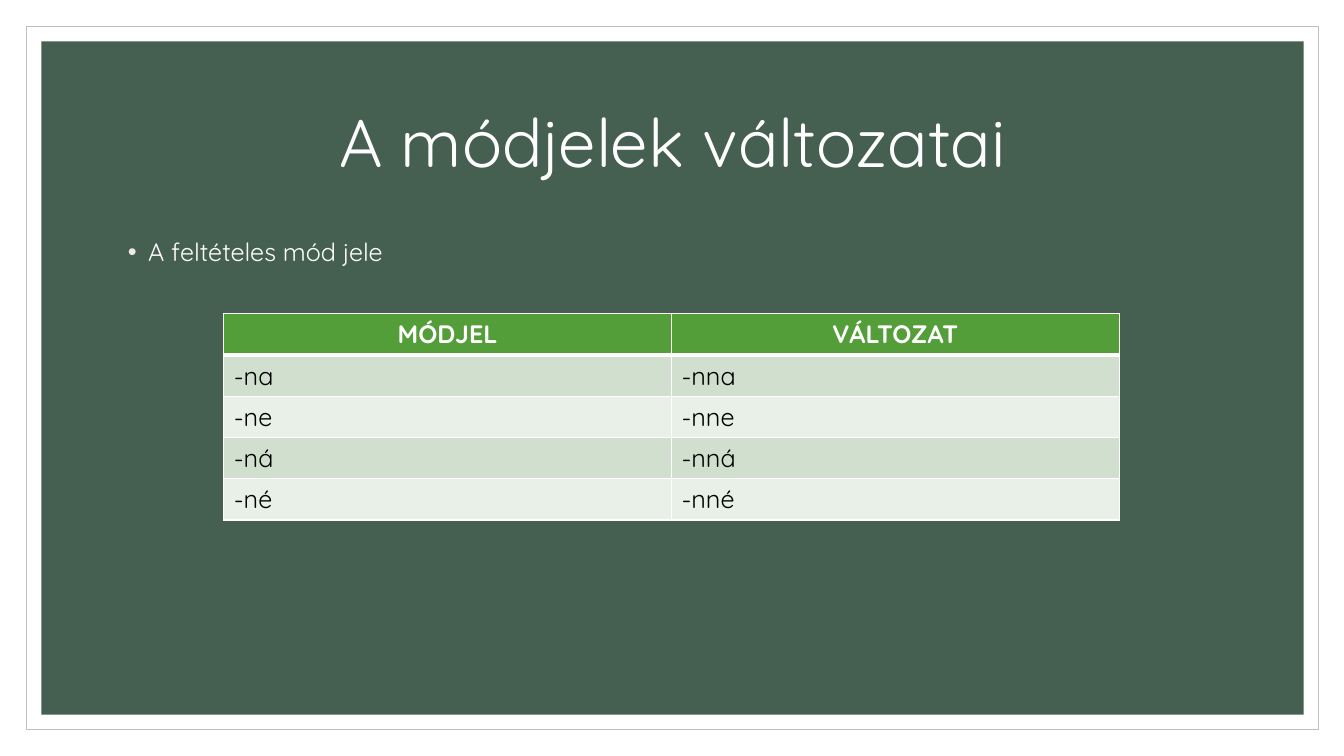
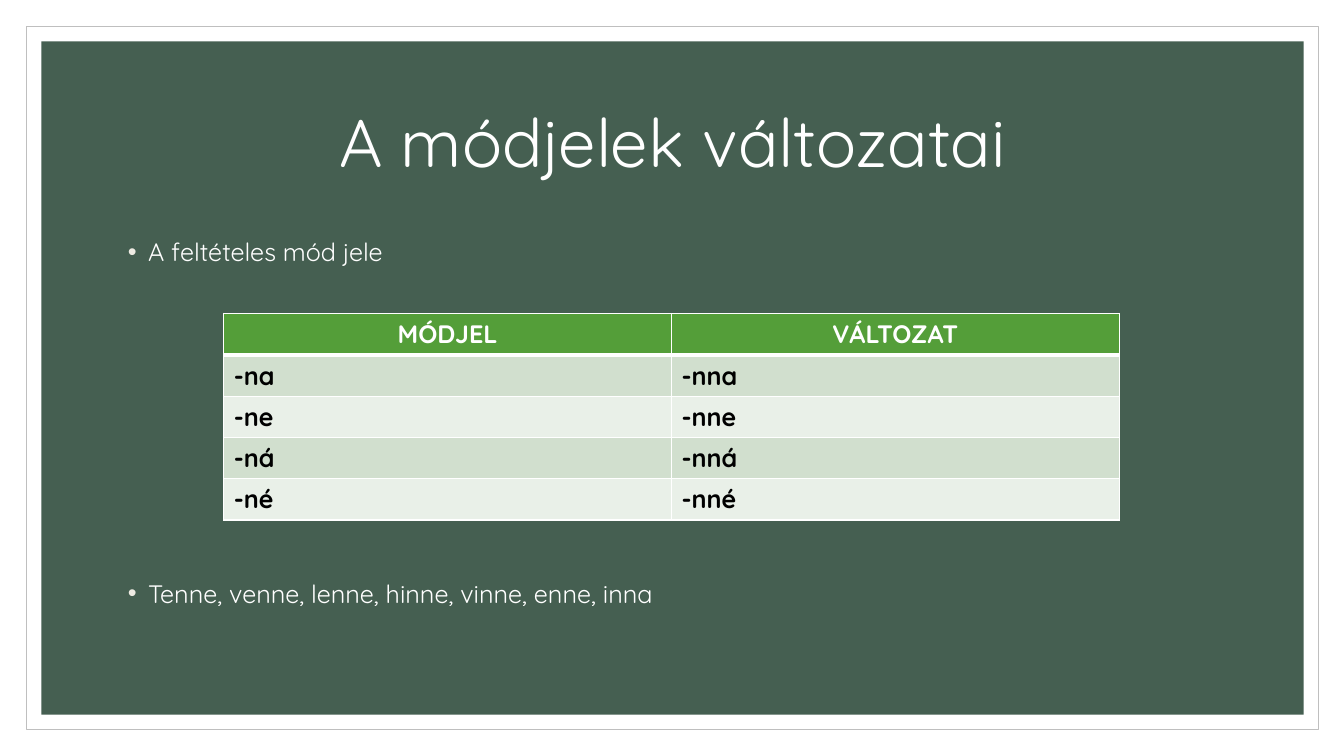
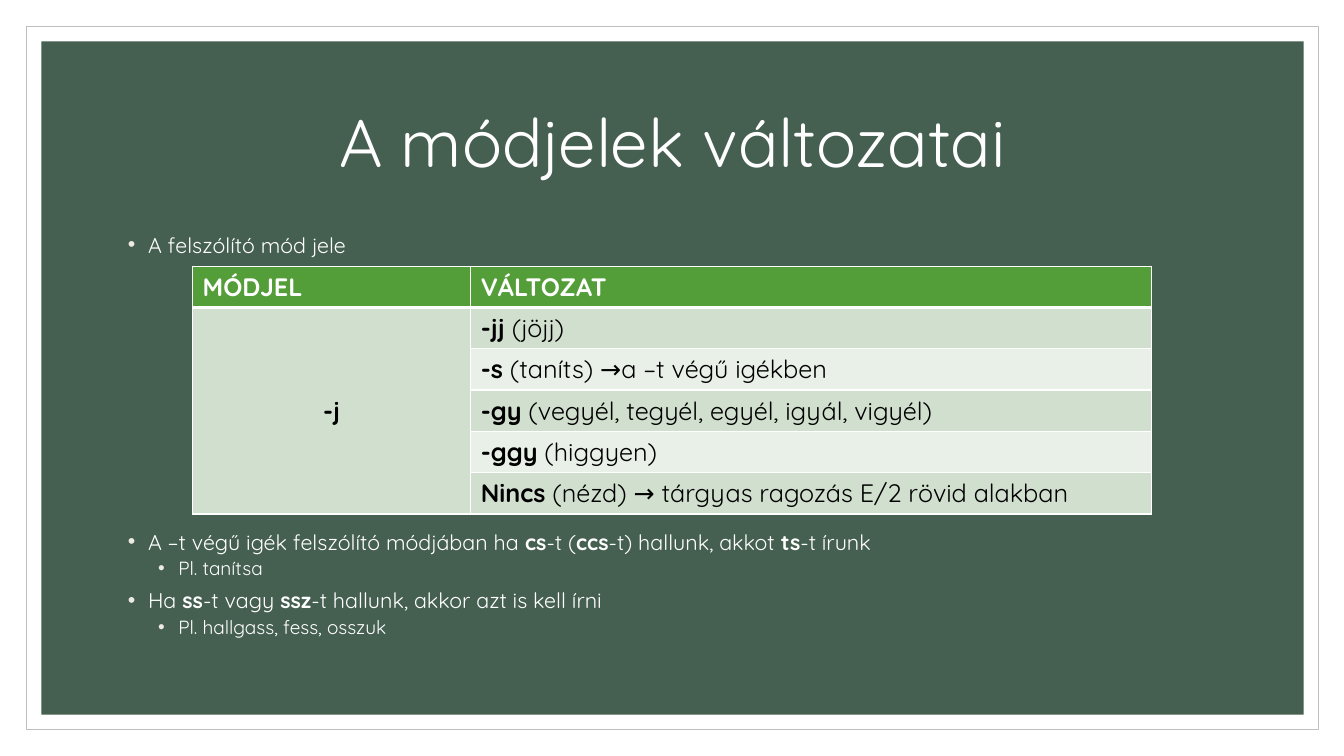
from dataclasses import dataclass

from lxml.etree import SubElement
from pptx import Presentation
from pptx.dml.color import RGBColor
from pptx.enum.shapes import MSO_SHAPE as SHAPE
from pptx.enum.text import MSO_ANCHOR as ANCHOR, PP_ALIGN as ALIGN
from pptx.oxml.ns import qn
from pptx.util import Inches, Pt


@dataclass(frozen=True)
class Theme:
    font: str = "Quicksand"
    white: str = "FFFFFF"
    black: str = "000000"
    board: str = "455F51"
    frame: str = "BFBFBF"
    bullet: str = "EEEBE3"
    header: str = "549E39"
    bands: tuple = ("D1DFCE", "E9F0E8")
    title_size: float = 48
    text_size: float = 18
    small_size: float = 15.3
    sub_size: float = 13.6
    rule: float = 1
    header_rule: float = 3


T = Theme()
TITLE = "A módjelek változatai"
SUFFIXES = ("na", "ne", "ná", "né")


def rgb(color):
    return RGBColor.from_string(color)


def write(p, text, size=T.text_size, color=T.white, bold=False,
          align=ALIGN.LEFT, spacing=1.0, before=0):
    p.alignment = align
    p.line_spacing = spacing
    p.space_before = Pt(before)
    for i, part in enumerate(text.split("*")):
        if part:
            r = p.add_run()
            r.text = part
            r.font.name = T.font
            r.font.size = Pt(size)
            r.font.bold = bold or i % 2 == 1
            r.font.color.rgb = rgb(color)


def add_bullet(p, level):
    p.level = level
    pPr = p._p.get_or_add_pPr()
    pPr.set("marL", str(Inches(0.2 + 0.3 * level)))
    pPr.set("indent", str(Inches(-0.2)))
    color = SubElement(pPr, qn("a:buClr"))
    SubElement(color, qn("a:srgbClr"), val=T.bullet)
    SubElement(pPr, qn("a:buFont"), typeface="Arial")
    SubElement(pPr, qn("a:buChar"), char="•")


def add_panel(s, margin_x, margin_y, width, height, fill, line=None):
    sp = s.shapes.add_shape(SHAPE.RECTANGLE, Inches(margin_x), Inches(margin_y),
                            Inches(width), Inches(height))
    sp.shadow.inherit = False
    sp.fill.solid()
    sp.fill.fore_color.rgb = rgb(fill)
    if line:
        sp.line.color.rgb = rgb(line)
        sp.line.width = Pt(0.5)
    else:
        sp.line.fill.background()


def add_text_frame(s, top, height, anchor=ANCHOR.TOP):
    sp = s.shapes.add_textbox(Inches(1.17), Inches(top), Inches(11), Inches(height))
    tf = sp.text_frame
    tf.word_wrap = True
    tf.vertical_anchor = anchor
    return tf


def add_base_slide(prs):
    s = prs.slides.add_slide(prs.slide_layouts[6])
    add_panel(s, 0.26, 0.26, 12.82, 6.98, T.white, T.frame)
    add_panel(s, 0.41, 0.41, 12.52, 6.68, T.board)
    tf = add_text_frame(s, 0.7, 1.5, ANCHOR.MIDDLE)
    write(tf.paragraphs[0], TITLE, size=T.title_size, align=ALIGN.CENTER, spacing=0.9)
    return s


def add_bullets(s, items, size=T.text_size, spacing=1.0, table_gap=0):
    tf = add_text_frame(s, 2.3, 4.3)
    for i, (level, text) in enumerate(items):
        p = tf.paragraphs[0] if i == 0 else tf.add_paragraph()
        before = table_gap if i == 1 else (9, 5)[level]
        write(p, text, size=T.sub_size if level else size,
              spacing=spacing, before=before)
        add_bullet(p, level)


def set_borders(cell, row):
    tcPr = cell._tc.get_or_add_tcPr()
    heavy = {(0, "lnB"), (1, "lnT")}
    for side in ("lnL", "lnR", "lnT", "lnB"):
        width = T.header_rule if (row, side) in heavy else T.rule
        ln = SubElement(tcPr, qn("a:" + side), w=str(Pt(width)))
        fill = SubElement(ln, qn("a:solidFill"))
        SubElement(fill, qn("a:srgbClr"), val=T.white)


def add_table(s, rows, left, top, widths, header_align=ALIGN.LEFT,
              bold=False, merge_first=False):
    row_height = 0.41
    shape = s.shapes.add_table(len(rows), len(widths), Inches(left), Inches(top),
                               Inches(sum(widths)), Inches(row_height * len(rows)))
    table = shape.table
    for column, width in zip(table.columns, widths):
        column.width = Inches(width)
    for i, row in enumerate(rows):
        for j, text in enumerate(row):
            cell = table.cell(i, j)
            set_borders(cell, i)
            cell.fill.solid()
            fill = T.bands[(i - 1) % 2] if i else T.header
            cell.fill.fore_color.rgb = rgb(fill)
            write(cell.text_frame.paragraphs[0], text,
                  color=T.black if i else T.white, bold=bold or i == 0,
                  align=ALIGN.LEFT if i else header_align)
    if merge_first:
        cell = table.cell(1, 0)
        cell.merge(table.cell(len(rows) - 1, 0))
        cell.vertical_anchor = ANCHOR.MIDDLE
        cell.text_frame.paragraphs[0].alignment = ALIGN.CENTER


def add_conditional_slide(prs, examples=(), bold=False):
    s = add_base_slide(prs)
    add_bullets(s, [(0, "A feltételes mód jele"), *examples], table_gap=222)
    rows = [("MÓDJEL", "VÁLTOZAT")] + [(f"-{x}", f"-n{x}") for x in SUFFIXES]
    add_table(s, rows, 2.22, 3.11, (4.44, 4.44),
              header_align=ALIGN.CENTER, bold=bold)


def add_imperative_slide(prs):
    s = add_base_slide(prs)
    add_bullets(s, [
        (0, "A felszólító mód jele"),
        (0, "A –t végű igék felszólító módjában ha *cs*-t (*ccs*-t) hallunk, akkot *ts*-t írunk"),
        (1, "Pl. tanítsa"),
        (0, "Ha *ss*-t vagy *ssz*-t hallunk, akkor azt is kell írni"),
        (1, "Pl. hallgass, fess, osszuk"),
    ], size=T.small_size, spacing=0.8, table_gap=197.5)
    add_table(s, [
        ("MÓDJEL", "VÁLTOZAT"),
        ("*-j*", "*-jj *(jöjj)"),
        ("", "*-s* (taníts) →a –t végű igékben"),
        ("", "*-gy* (vegyél, tegyél, egyél, igyál, vigyél)"),
        ("", "*-ggy* (higgyen)"),
        ("", "*Nincs* (nézd) → tárgyas ragozás E/2 rövid alakban"),
    ], 1.91, 2.64, (2.76, 6.75), merge_first=True)


def main():
    prs = Presentation()
    prs.slide_width, prs.slide_height = Inches(13.33), Inches(7.5)
    add_conditional_slide(prs)
    add_conditional_slide(
        prs, [(0, "Tenne, venne, lenne, hinne, vinne, enne, inna")], bold=True)
    add_imperative_slide(prs)
    prs.save("out.pptx")


if __name__ == "__main__":
    main()
